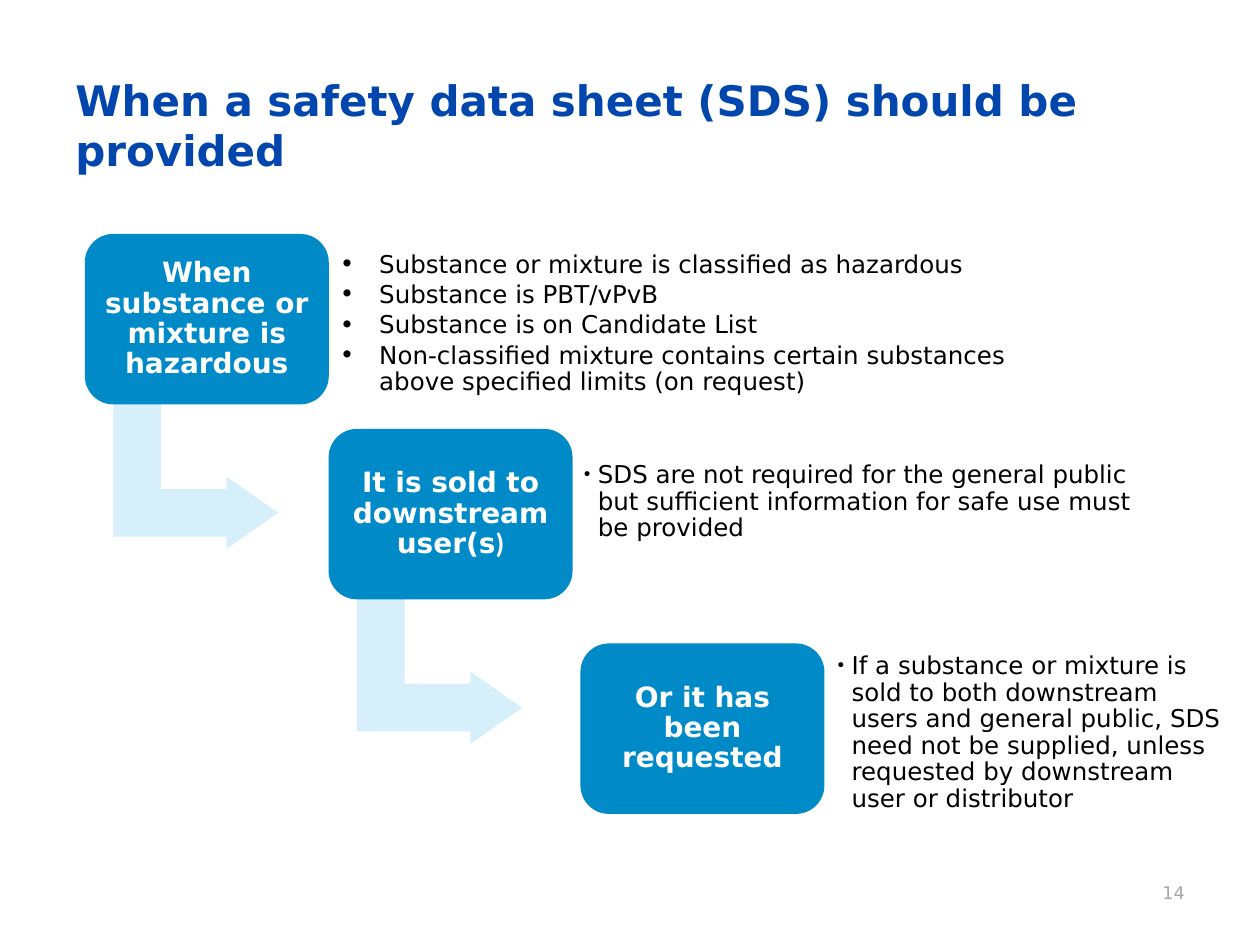
from dataclasses import dataclass
from lxml.etree import SubElement
from pptx import Presentation
from pptx.dml.color import RGBColor
from pptx.enum.shapes import MSO_SHAPE
from pptx.enum.text import MSO_ANCHOR, PP_ALIGN
from pptx.oxml.ns import qn
from pptx.util import Pt

NAVY = RGBColor(0x00, 0x46, 0xAD)
BLUE = RGBColor(0x00, 0x8B, 0xC8)
PALE = RGBColor(0xD7, 0xEF, 0xFA)
WHITE = RGBColor(0xFF, 0xFF, 0xFF)
BLACK = RGBColor(0x00, 0x00, 0x00)
GREY = RGBColor(0xA6, 0xA6, 0xA6)
FONT = "DejaVu Sans"
BOX_W, BOX_H = 139.4, 97.4


def write(sp, paragraphs, size=14, color=BLACK, bold=False, align=PP_ALIGN.LEFT,
          anchor=MSO_ANCHOR.MIDDLE, inset=(7.2, 3.6), line=1.0, after=0,
          indent=0, bullet_size=100):
    tf = sp.text_frame
    tf.word_wrap = True
    tf.vertical_anchor = anchor
    tf.margin_left = tf.margin_right = Pt(inset[0])
    tf.margin_top = tf.margin_bottom = Pt(inset[1])
    for i, runs in enumerate(paragraphs):
        p = tf.add_paragraph() if i else tf.paragraphs[0]
        p.alignment, p.line_spacing, p.space_after = align, line, Pt(after)
        for text, font in runs:
            r = p.add_run()
            r.text = text
            r.font.name, r.font.size, r.font.bold = font, Pt(size), bold
            r.font.color.rgb = color
        if indent:
            pPr = p._p.get_or_add_pPr()
            pPr.set("marL", str(Pt(indent)))
            pPr.set("indent", str(-Pt(indent)))
            SubElement(pPr, qn("a:buSzPct")).set("val", str(bullet_size * 1000))
            SubElement(pPr, qn("a:buFont")).set("typeface", FONT)
            SubElement(pPr, qn("a:buChar")).set("char", "•")


@dataclass
class StepSlide:
    """Draws the parts of a stepped process on one slide."""
    s: object
    fill: RGBColor = BLUE
    arrow_fill: RGBColor = PALE

    def shape(self, kind, x, y, w, h, fill):
        sp = self.s.shapes.add_shape(kind, Pt(x), Pt(y), Pt(w), Pt(h))
        sp.shadow.inherit = False
        sp.fill.solid()
        sp.fill.fore_color.rgb = fill
        sp.line.fill.background()
        return sp

    def text(self, x, y, w, h, paragraphs, **style):
        sp = self.s.shapes.add_textbox(Pt(x), Pt(y), Pt(w), Pt(h))
        write(sp, paragraphs, **style)

    def arrow(self, x, y):
        sp = self.shape(MSO_SHAPE.BENT_UP_ARROW, x + 22, y + 91.5, 82.8, 94.3, self.arrow_fill)
        sp.rotation = 90
        for i, value in enumerate((0.328, 0.25, 0.358)):
            sp.adjustments[i] = value

    def box(self, x, y, runs):
        sp = self.shape(MSO_SHAPE.ROUNDED_RECTANGLE, x, y, BOX_W, BOX_H, self.fill)
        write(sp, [runs], size=16, color=WHITE, bold=True, align=PP_ALIGN.CENTER,
              inset=(4.6, 4.6), line=0.9, after=5.6)

    def bullets(self, frame, items, indent, bullet_size):
        self.text(*frame, [[(item, FONT)] for item in items], inset=(4.3, 4.3),
                  line=0.9, after=2.1, indent=indent, bullet_size=bullet_size)


STEPS = [
    (48.5, 133.7, [("When substance or mixture is hazardous", FONT)],
     (189.9, 146, 396.7, 78.5), 22.5, 100,
     ["Substance or mixture is classified as hazardous",
      "Substance is PBT/vPvB",
      "Substance is on Candidate List",
      "Non-classified mixture contains certain substances above specified limits (on request)"]),
    (187.8, 245.1, [("It is sold to downstream user(s", FONT), (")", "Calibri")],
     (328.3, 247.7, 331.9, 78.5), 9, 70,
     ["SDS are not required for the general public but sufficient information "
      "for safe use must be provided"]),
    (331.7, 367.7, [("Or it has been requested", FONT)],
     (473.3, 355.2, 232.6, 127.4), 9, 70,
     ["If a substance or mixture is sold to both downstream users and general public, "
      "SDS need not be supplied, unless requested by downstream user or distributor"]),
]


def main():
    prs = Presentation()
    prs.slide_width, prs.slide_height = Pt(720), Pt(540)
    page = StepSlide(prs.slides.add_slide(prs.slide_layouts[6]))
    page.text(36, 26.2, 648, 90, [[("When a safety data sheet (SDS) should be provided", FONT)]],
              size=24, color=NAVY, bold=True)
    for i, (x, y, runs, frame, indent, bullet_size, items) in enumerate(STEPS):
        if i < len(STEPS) - 1:
            page.arrow(x, y)
        page.box(x, y, runs)
        page.bullets(frame, items, indent, bullet_size)
    page.text(516, 500.4, 168, 28.8, [[("14", FONT)]], size=10, color=GREY,
              align=PP_ALIGN.RIGHT, anchor=MSO_ANCHOR.TOP)
    prs.save("out.pptx")


if __name__ == "__main__":
    main()
